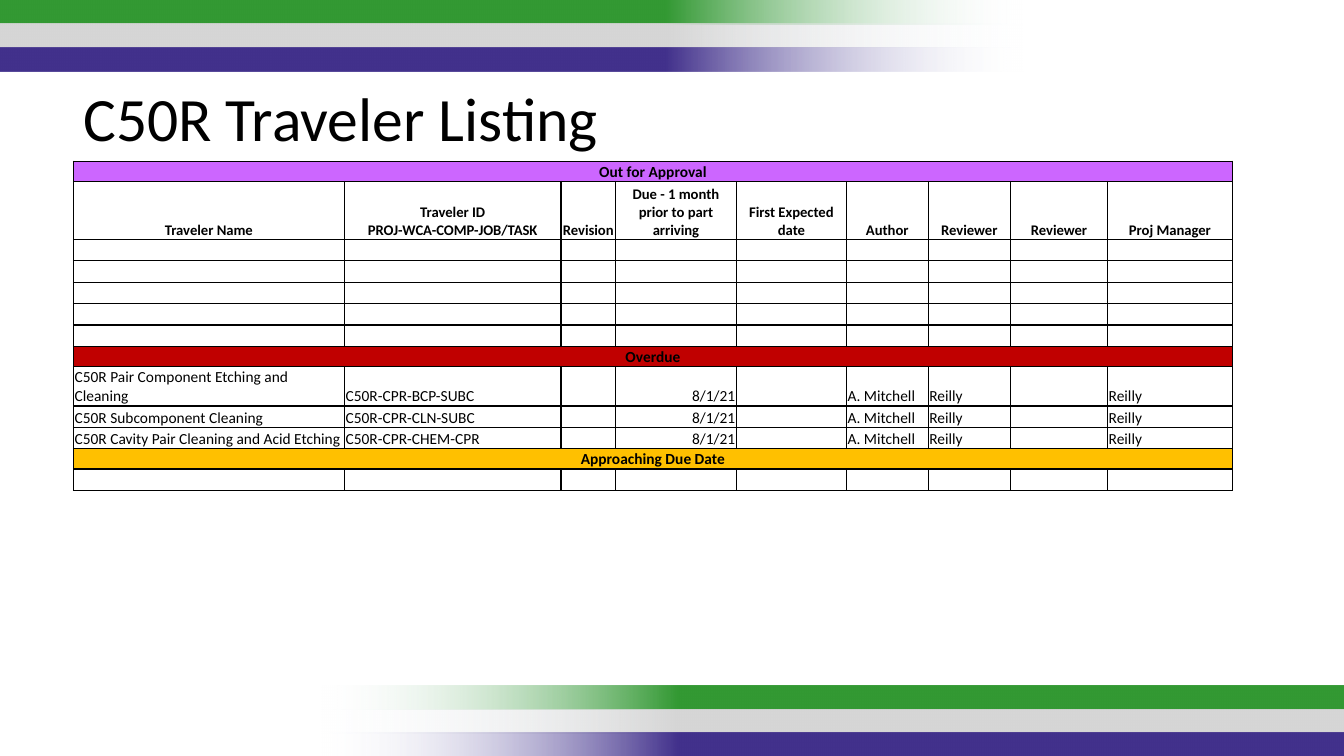
import copy
import dataclasses
import typing

import lxml.etree
import pptx
import pptx.dml.color
import pptx.enum.shapes
import pptx.enum.text
import pptx.oxml.ns
import pptx.slide
import pptx.table
import pptx.util

Cm = pptx.util.Cm
Pt = pptx.util.Pt
Align = pptx.enum.text.PP_ALIGN
Anchor = pptx.enum.text.MSO_ANCHOR
qn = pptx.oxml.ns.qn


@dataclasses.dataclass(frozen=True)
class Theme:
    font: str = "Calibri"
    title_size: float = 44
    body_size: float = 11
    header_size: float = 10.5
    border_size: float = 1
    ink: str = "000000"
    fade: str = "F7FAFD"
    stripes: tuple[str, ...] = ("339933", "D6D6D6", "42318C")
    approval: str = "CC66FF"
    overdue: str = "C00000"
    approaching: str = "FFC000"


THEME = Theme()


@dataclasses.dataclass(frozen=True)
class StripeGroup:
    left: float
    top: float
    rotation: int


@dataclasses.dataclass(frozen=True)
class Row:
    height: float = 0.54
    texts: tuple[str, ...] = ("",) * 9
    size: float = THEME.body_size
    bold: bool = False
    centred: bool = False
    fill: str | None = None
    anchor: typing.Any = Anchor.BOTTOM


def band(text: str, fill: str, anchor: typing.Any = Anchor.BOTTOM) -> Row:
    return Row(0.51, (text,) + ("",) * 8, bold=True, centred=True, fill=fill, anchor=anchor)


def traveler(name: str, code: str, height: float = 0.54) -> Row:
    return Row(height, (name, code, "", "8/1/21", "", "A. Mitchell", "Reilly", "", "Reilly"))


STRIPE_GROUPS = (StripeGroup(-0.03, 0, 180), StripeGroup(8.07, 17.27, 0))
STRIPE_WIDTH, STRIPE_HEIGHT, STRIPE_STEP = 25.83, 0.61, 0.6
COLUMN_WIDTHS = (6.83, 5.46, 1.37, 3.05, 2.77, 2.06, 2.08, 2.44, 3.15)
DUE_COLUMN = 3
HEADERS = (
    "Traveler Name", "Traveler ID\vPROJ-WCA-COMP-JOB/TASK", "Revision",
    "Due - 1 month prior to part arriving", "First Expected date",
    "Author", "Reviewer", "Reviewer", "Proj Manager",
)
ROWS = (
    band("Out for Approval", THEME.approval),
    Row(1.46, HEADERS, THEME.header_size, bold=True, centred=True),
    *[Row()] * 5,
    band("Overdue", THEME.overdue, Anchor.MIDDLE),
    traveler("C50R Pair Component Etching and Cleaning", "C50R-CPR-BCP-SUBC", 0.99),
    traveler("C50R Subcomponent Cleaning", "C50R-CPR-CLN-SUBC"),
    traveler("C50R Cavity Pair Cleaning and Acid Etching", "C50R-CPR-CHEM-CPR"),
    band("Approaching Due Date", THEME.approaching),
    Row(),
)


def rgb(value: str) -> pptx.dml.color.RGBColor:
    return pptx.dml.color.RGBColor.from_string(value)


def apply_format(target: typing.Any, values: dict[str, typing.Any]) -> None:
    for name, value in values.items():
        setattr(target, name, value)


def format_font(span: typing.Any, size: float, bold: bool = False) -> None:
    apply_format(span.font, {"name": THEME.font, "size": Pt(size), "bold": bold})
    span.font.color.rgb = rgb(THEME.ink)


def draw_stripe(page: pptx.slide.Slide, group: StripeGroup, index: int, colour: str) -> None:
    bar = page.shapes.add_shape(
        pptx.enum.shapes.MSO_SHAPE.RECTANGLE,
        Cm(group.left), Cm(group.top + index * STRIPE_STEP),
        Cm(STRIPE_WIDTH), Cm(STRIPE_HEIGHT),
    )
    bar.rotation = group.rotation
    bar.shadow.inherit = False
    bar.line.fill.background()
    bar.fill.gradient()
    bar.fill.gradient_angle = 0
    for stop, position, value in zip(bar.fill.gradient_stops, (0, 0.35), (THEME.fade, colour)):
        stop.position = position
        stop.color.rgb = rgb(value)
    # Transparent start, solid colour through to the end
    stops = bar.element.spPr.find(".//" + qn("a:gsLst"))
    lxml.etree.SubElement(stops[0][0], qn("a:alpha"), val="0")
    last = copy.deepcopy(stops[1])
    last.set("pos", "100000")
    stops.append(last)


def draw_title(page: pptx.slide.Slide) -> None:
    box = page.shapes.add_textbox(Cm(1.85), Cm(1.9), Cm(26.19), Cm(2.13))
    apply_format(box.text_frame, {
        "word_wrap": True,
        "auto_size": pptx.enum.text.MSO_AUTO_SIZE.SHAPE_TO_FIT_TEXT,
    })
    span = box.text_frame.paragraphs[0].add_run()
    span.text = "C50R Traveler Listing"
    format_font(span, THEME.title_size)


def add_borders(cell: typing.Any) -> None:
    properties = cell._tc.get_or_add_tcPr()
    for side in ("lnL", "lnR", "lnT", "lnB"):
        line = lxml.etree.SubElement(properties, qn(f"a:{side}"), w=str(Pt(THEME.border_size)))
        solid = lxml.etree.SubElement(line, qn("a:solidFill"))
        lxml.etree.SubElement(solid, qn("a:srgbClr"), val=THEME.ink)


def fill_cell(cell: typing.Any, row: Row, column: int) -> None:
    add_borders(cell)
    if row.fill:
        cell.fill.solid()
        cell.fill.fore_color.rgb = rgb(row.fill)
    else:
        cell.fill.background()
    apply_format(cell, {
        "margin_left": Cm(0.03), "margin_right": Cm(0.03),
        "margin_top": Cm(0.03), "margin_bottom": 0, "vertical_anchor": row.anchor,
    })
    para = cell.text_frame.paragraphs[0]
    para.text = row.texts[column]
    if row.centred:
        para.alignment = Align.CENTER
    else:
        para.alignment = Align.RIGHT if column == DUE_COLUMN else Align.LEFT
    for span in para.runs:
        format_font(span, row.size, row.bold)
    # Breaks and empty cells need the type size too
    size = str(int(row.size * 100))
    for line_break in para._p.findall(qn("a:br")):
        lxml.etree.SubElement(line_break, qn("a:rPr"), sz=size)
    lxml.etree.SubElement(para._p, qn("a:endParaRPr"), sz=size)


def draw_table(page: pptx.slide.Slide) -> None:
    frame = page.shapes.add_table(
        len(ROWS), len(COLUMN_WIDTHS), Cm(1.85), Cm(4.06),
        Cm(sum(COLUMN_WIDTHS)), Cm(sum(row.height for row in ROWS)),
    )
    table: pptx.table.Table = frame.table
    apply_format(table, {"first_row": False, "horz_banding": False})
    for column, width in zip(table.columns, COLUMN_WIDTHS):
        column.width = Cm(width)
    for index, row in enumerate(ROWS):
        table.rows[index].height = Cm(row.height)
        for column in range(len(COLUMN_WIDTHS)):
            fill_cell(table.cell(index, column), row, column)
        if row.fill:
            table.cell(index, 0).merge(table.cell(index, len(COLUMN_WIDTHS) - 1))


def main() -> None:
    deck = pptx.Presentation()
    apply_format(deck, {"slide_width": Cm(33.87), "slide_height": Cm(19.05)})
    page = deck.slides.add_slide(deck.slide_layouts[6])
    # Stripes at the top and bottom
    for group in STRIPE_GROUPS:
        for index, colour in enumerate(THEME.stripes):
            draw_stripe(page, group, index, colour)
    # Listing and its title
    draw_table(page)
    draw_title(page)
    deck.save("out.pptx")


if __name__ == "__main__":
    main()
